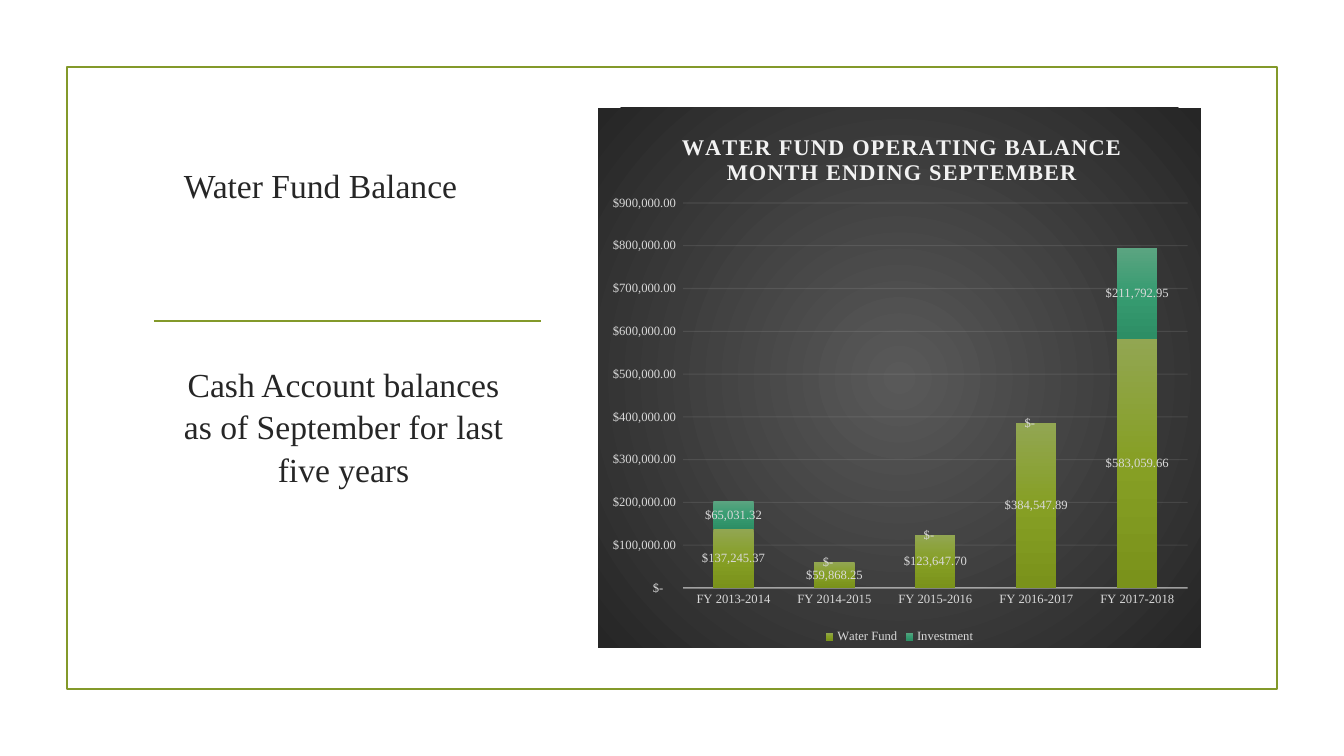
from lxml import etree
from pptx import Presentation, util as u
from pptx.chart.data import CategoryChartData
from pptx.dml.color import RGBColor
from pptx.enum import chart as ch, shapes, text
from pptx.oxml import parse_xml
from pptx.oxml.ns import nsdecls, qn

HEADING = "Water Fund Balance"
SUBTITLE = "Cash Account balances as of September for last five years"
CHART_TITLE = ["WATER FUND OPERATING BALANCE", "MONTH ENDING SEPTEMBER"]
YEARS = ["FY 2013-2014", "FY 2014-2015", "FY 2015-2016", "FY 2016-2017", "FY 2017-2018"]
FUNDS = [
    ("Water Fund", [137245.37, 59868.25, 123647.70, 384547.89, 583059.66],
     [(0, "92A652"), (50, "869F24"), (100, "7A921B")]),
    ("Investment", [65031.32, 0, 0, 0, 211792.95],
     [(0, "5BA481"), (50, "379C71"), (100, "2D8E65")]),
]
BACKDROP = [(0, "595959"), (100, "262626")]
DOLLARS = '_("$"* #,##0.00_);_("$"* \\(#,##0.00\\);_("$"* "-"??_);_(@_)'

FONT = "Times New Roman"
OLIVE = RGBColor(0x83, 0x99, 0x2A)
INK = RGBColor(0x26, 0x26, 0x26)
PALE = RGBColor(0xD9, 0xD9, 0xD9)
NEAR_WHITE = RGBColor(0xF2, 0xF2, 0xF2)

# Boxes in px: left, top, width, height
SLIDE = (1344, 756)
FRAME = (67, 67, 1210, 622)
RULE = (154, 321, 541, 321)
HEADING_BOX = (104, 129, 433, 81)
SUBTITLE_BOX = (161, 357, 365, 230)
CHART_BOX = (598, 108, 603, 540)
PLOT_BOX = (683, 203, 505, 385)
TITLE_CORNER = (679, 130)
EMU_PER_PX = 914400 / 100.8


def emu(lengths):
    return [u.Emu(round(n * EMU_PER_PX)) for n in lengths]


def set_format(target, formats):
    for name, value in formats.items():
        setattr(target, name, value)


def set_font(font, size, color, bold=False):
    set_format(font, {"name": FONT, "size": u.Pt(size), "bold": bold})
    font.color.rgb = color


def set_line(line, color, width, opacity=100):
    line.color.rgb = color
    line.width = u.Pt(width)
    if opacity < 100:
        rgb = line.fill._xPr.find(".//" + qn("a:srgbClr"))
        etree.SubElement(rgb, qn("a:alpha"), val=str(opacity * 1000))


def gradient(stops, direction):
    marks = "".join(f'<a:gs pos="{pos * 1000}"><a:srgbClr val="{color}"/></a:gs>'
                    for pos, color in stops)
    return parse_xml(f'<a:gradFill {nsdecls("a")} rotWithShape="1">'
                     f'<a:gsLst>{marks}</a:gsLst>{direction}</a:gradFill>')


def layout(box, inner=False):
    """Manual chart layout for a px box, as fractions of the chart."""
    left, top, width, height = CHART_BOX
    shares = [(box[0] - left) / width, (box[1] - top) / height]
    shares += [n / total for n, total in zip(box[2:], (width, height))]
    parts = '<c:layoutTarget val="inner"/>' if inner else ""
    parts += '<c:xMode val="edge"/><c:yMode val="edge"/>'
    parts += "".join(f'<c:{tag} val="{share:.3f}"/>' for tag, share in zip("xywh", shares))
    return parse_xml(f'<c:layout {nsdecls("c")}><c:manualLayout>{parts}'
                     '</c:manualLayout></c:layout>')


def write(shape, words, box, anchor, spacing):
    set_format(shape, dict(zip(("left", "top", "width", "height"), emu(box))))
    frame = shape.text_frame
    frame.text = words
    set_format(frame, {"word_wrap": True, "vertical_anchor": anchor,
                       "auto_size": text.MSO_AUTO_SIZE.NONE})
    set_format(frame.paragraphs[0], {"alignment": text.PP_ALIGN.CENTER,
                                     "line_spacing": spacing})
    set_font(frame.paragraphs[0].runs[0].font, 24, INK)


def add_frame(slide):
    border = slide.shapes.add_shape(shapes.MSO_SHAPE.RECTANGLE, *emu(FRAME))
    border.shadow.inherit = False
    border.fill.background()
    set_line(border.line, OLIVE, 1.25)
    rule = slide.shapes.add_connector(shapes.MSO_CONNECTOR.STRAIGHT, *emu(RULE))
    set_line(rule.line, OLIVE, 1.25)
    etree.SubElement(rule._element.spPr, qn("a:effectLst"))


def style_title(chart):
    frame = chart.chart_title.text_frame
    frame.text = "\n".join(CHART_TITLE)
    for paragraph in frame.paragraphs:
        run = paragraph.runs[0]
        set_font(run.font, 16, NEAR_WHITE, True)
        run.font._element.set("spc", "100")
    title = chart.chart_title._element
    for old in title.findall(qn("c:layout")):
        title.remove(old)
    title.find(qn("c:tx")).addnext(layout(TITLE_CORNER))
    chart.chart_title.include_in_layout = False


def style_axes(chart):
    for axis in (chart.category_axis, chart.value_axis):
        set_format(axis, {"major_tick_mark": ch.XL_TICK_MARK.NONE,
                          "minor_tick_mark": ch.XL_TICK_MARK.NONE})
        set_font(axis.tick_labels.font, 9, PALE)
    set_line(chart.category_axis.format.line, NEAR_WHITE, 1, 54)
    amounts = chart.value_axis
    set_format(amounts, {"minimum_scale": 0, "maximum_scale": 900000, "major_unit": 100000})
    amounts.format.line.fill.background()
    set_line(amounts.major_gridlines.format.line, NEAR_WHITE, 0.75, 10)
    set_format(amounts.tick_labels, {"number_format": DOLLARS, "number_format_is_linked": False})


def add_balances(slide):
    balances = CategoryChartData(number_format=DOLLARS)
    balances.categories = YEARS
    for name, amounts, _ in FUNDS:
        balances.add_series(name, amounts)
    chart = slide.shapes.add_chart(ch.XL_CHART_TYPE.COLUMN_STACKED,
                                   *emu(CHART_BOX), balances).chart
    set_font(chart.font, 10, PALE)
    style_title(chart)
    style_axes(chart)

    columns = chart.plots[0]
    set_format(columns, {"gap_width": 150, "overlap": 100, "vary_by_categories": False})
    for series, (_, _, stops) in zip(columns.series, FUNDS):
        series._element.get_or_add_spPr().append(
            gradient(stops, '<a:lin ang="5400000" scaled="0"/>'))
        labels = series.data_labels
        set_format(labels, {"show_value": True, "position": ch.XL_LABEL_POSITION.CENTER,
                            "number_format": DOLLARS, "number_format_is_linked": False})
        set_font(labels.font, 9, PALE)

    chart.has_legend = True
    set_format(chart.legend, {"position": ch.XL_LEGEND_POSITION.BOTTOM,
                              "include_in_layout": False})
    set_font(chart.legend.font, 9, PALE)

    body = chart._chartSpace.find(qn("c:chart"))
    plot_area = body.find(qn("c:plotArea"))
    for old in plot_area.findall(qn("c:layout")):
        plot_area.remove(old)
    plot_area.insert(0, layout(PLOT_BOX, inner=True))
    backdrop = parse_xml(f'<c:spPr {nsdecls("c", "a")}><a:ln><a:noFill/></a:ln></c:spPr>')
    backdrop.insert(0, gradient(BACKDROP, '<a:path path="circle"><a:fillToRect l="50000" '
                                't="50000" r="50000" b="50000"/></a:path>'))
    body.addnext(backdrop)


def main():
    deck = Presentation()
    set_format(deck, dict(zip(("slide_width", "slide_height"), emu(SLIDE))))
    slide = deck.slides.add_slide(deck.slide_layouts[5])
    add_frame(slide)
    write(slide.shapes.title, HEADING, HEADING_BOX, text.MSO_ANCHOR.BOTTOM, 1.0)
    subtitle = slide.shapes.add_textbox(*emu(SUBTITLE_BOX))
    write(subtitle, SUBTITLE, SUBTITLE_BOX, text.MSO_ANCHOR.TOP, 1.05)
    add_balances(slide)
    deck.save("out.pptx")


if __name__ == "__main__":
    main()
